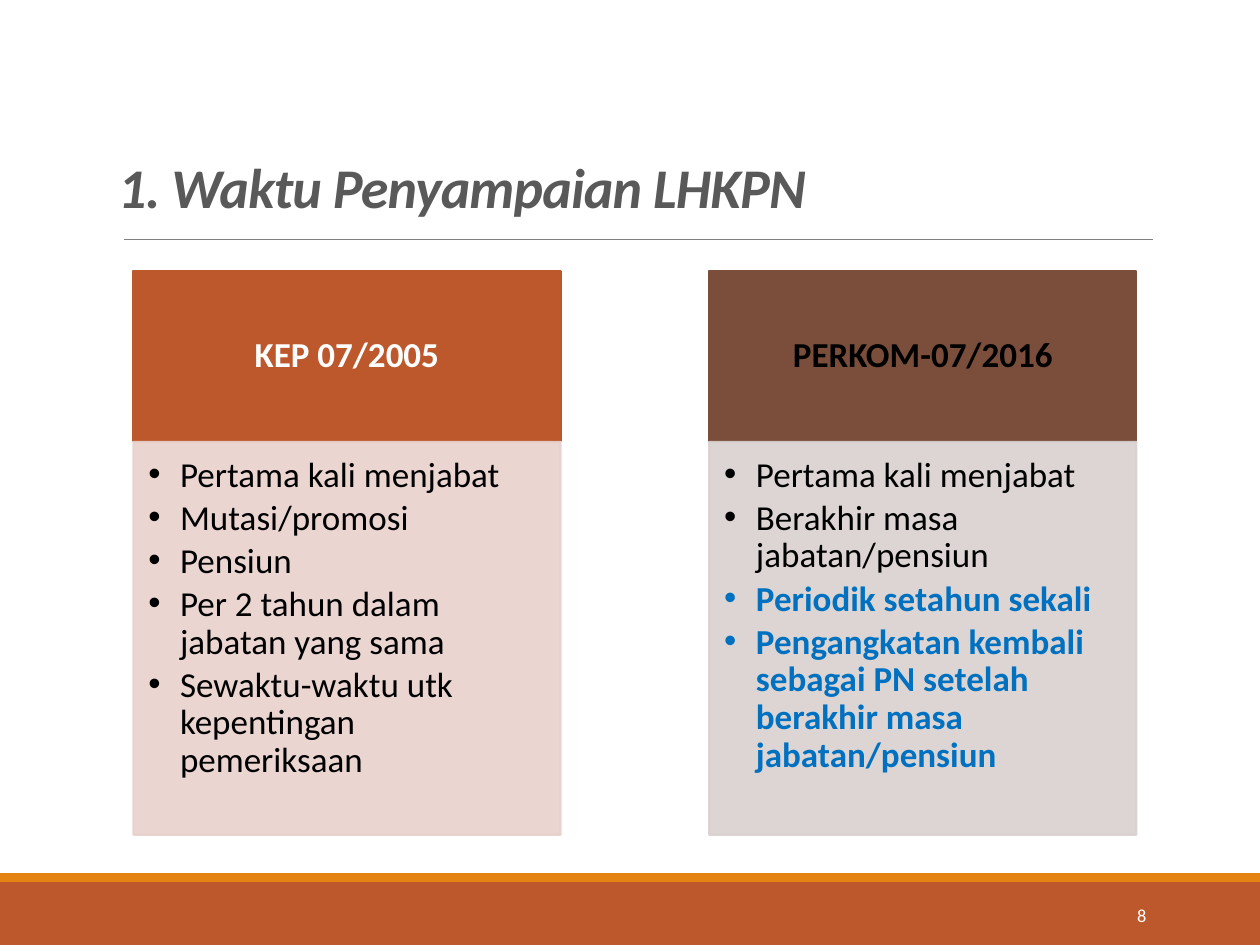
from lxml.etree import SubElement
from pptx import Presentation
from pptx.dml.color import RGBColor
from pptx.enum.shapes import MSO_CONNECTOR, MSO_SHAPE
from pptx.enum.text import MSO_ANCHOR as Anchor, MSO_AUTO_SIZE, PP_ALIGN as Align
from pptx.oxml.ns import qn
from pptx.util import Cm, Pt


def add_rectangle(box, color, outlined=False, alpha=None):
    rectangle = slide.shapes.add_shape(MSO_SHAPE.RECTANGLE, *map(Cm, box))
    rectangle.shadow.inherit = False
    rectangle.fill.solid()
    rectangle.fill.fore_color.rgb = RGBColor.from_string(color)
    if outlined:
        rectangle.line.color.rgb = RGBColor.from_string(color)
        rectangle.line.width = Pt(1.25)
    else:
        rectangle.line.fill.background()
    if alpha:
        for color_element in rectangle._element.spPr.iter(qn("a:srgbClr")):
            SubElement(color_element, qn("a:alpha"), val=str(alpha * 1000))
    return rectangle


def write_text(shape, lines, anchor, margins, paragraph_format, font_format):
    """Write (text, color, bold) lines, one paragraph each."""
    frame = shape.text_frame
    frame.word_wrap = True
    frame.auto_size = MSO_AUTO_SIZE.NONE
    frame.vertical_anchor = anchor
    for side, margin in zip(("left", "top", "right", "bottom"), margins):
        setattr(frame, f"margin_{side}", Cm(margin))
    for index, (text, color, bold) in enumerate(lines):
        paragraph = frame.add_paragraph() if index else frame.paragraphs[0]
        for name, value in paragraph_format.items():
            setattr(paragraph, name, value)
        run = paragraph.add_run()
        run.text = text
        run.font.color.rgb = RGBColor.from_string(color)
        for name, value in {"name": "Calibri", "bold": bold, **font_format}.items():
            setattr(run.font, name, value)


presentation = Presentation()
presentation.slide_width = Cm(25.4)
presentation.slide_height = Cm(19.05)
slide = presentation.slides.add_slide(presentation.slide_layouts[5])
DEFAULT_MARGINS = (0.25, 0.13, 0.25, 0.13)

# Footer bands and title rule
add_rectangle((0, 17.78, 25.4, 1.27), "BD582C")
add_rectangle((0, 17.6, 25.4, 0.18), "E48312")
rule = slide.shapes.add_connector(
    MSO_CONNECTOR.STRAIGHT, Cm(2.49), Cm(4.83), Cm(23.24), Cm(4.83))
rule.line.color.rgb = RGBColor.from_string("808080")
rule.line.width = Pt(0.5)
SubElement(rule._element.spPr, qn("a:effectLst"))

# Title
title = slide.shapes.title
title.left, title.top, title.width, title.height = map(Cm, (2.13, 0.91, 23.27, 3.66))
write_text(title, [("1. Waktu Penyampaian LHKPN", "595959", True)], Anchor.BOTTOM,
           DEFAULT_MARGINS, {"alignment": Align.LEFT, "line_spacing": 0.85},
           {"size": Pt(32), "italic": True})
title.text_frame.paragraphs[0].runs[0].font._element.set("spc", "-50")

# Comparison columns
BLACK, BLUE = "000000", "0070C0"
columns = [
    (2.69, "KEP 07/2005", "FFFFFF", "BD582C", "E8D1CD", [
        ("Pertama kali menjabat", BLACK, False),
        ("Mutasi/promosi", BLACK, False),
        ("Pensiun", BLACK, False),
        ("Per 2 tahun dalam jabatan yang sama", BLACK, False),
        ("Sewaktu-waktu utk kepentingan pemeriksaan", BLACK, False),
    ]),
    (14.3, "PERKOM-07/2016", BLACK, "7A4E3A", "D9D1CF", [
        ("Pertama kali menjabat", BLACK, False),
        ("Berakhir masa jabatan/pensiun", BLACK, False),
        ("Periodik setahun sekali", BLUE, True),
        ("Pengangkatan kembali sebagai PN setelah berakhir masa jabatan/pensiun",
         BLUE, True),
    ]),
]
for left, heading, heading_color, header_fill, body_fill, items in columns:
    header = add_rectangle((left, 5.46, 8.61, 3.44), header_fill, outlined=True)
    write_text(header, [(heading, heading_color, True)], Anchor.MIDDLE,
               (0.41, 0.23, 0.41, 0.23),
               {"alignment": Align.CENTER, "line_spacing": 0.9}, {"size": Pt(20)})
    body = add_rectangle((left, 8.91, 8.61, 7.92), body_fill, outlined=True, alpha=90)
    write_text(body, items, Anchor.TOP, (0.3, 0.3, 0.41, 0.43),
               {"alignment": Align.LEFT, "line_spacing": 0.9, "space_after": Pt(3)},
               {"size": Pt(20)})
    for paragraph in body.text_frame.paragraphs:
        properties = paragraph._p.get_or_add_pPr()
        properties.set("marL", str(Cm(0.64)))
        properties.set("indent", str(Cm(-0.64)))
        SubElement(properties, qn("a:buFont"), typeface="Arial")
        SubElement(properties, qn("a:buChar"), char="•")

# Slide number
number = slide.shapes.add_textbox(*map(Cm, (20.62, 17.93, 2.74, 1.02)))
write_text(number, [("8", "FFFFFF", False)], Anchor.MIDDLE, DEFAULT_MARGINS,
           {"alignment": Align.RIGHT}, {"size": Pt(10.5)})

presentation.save("out.pptx")
